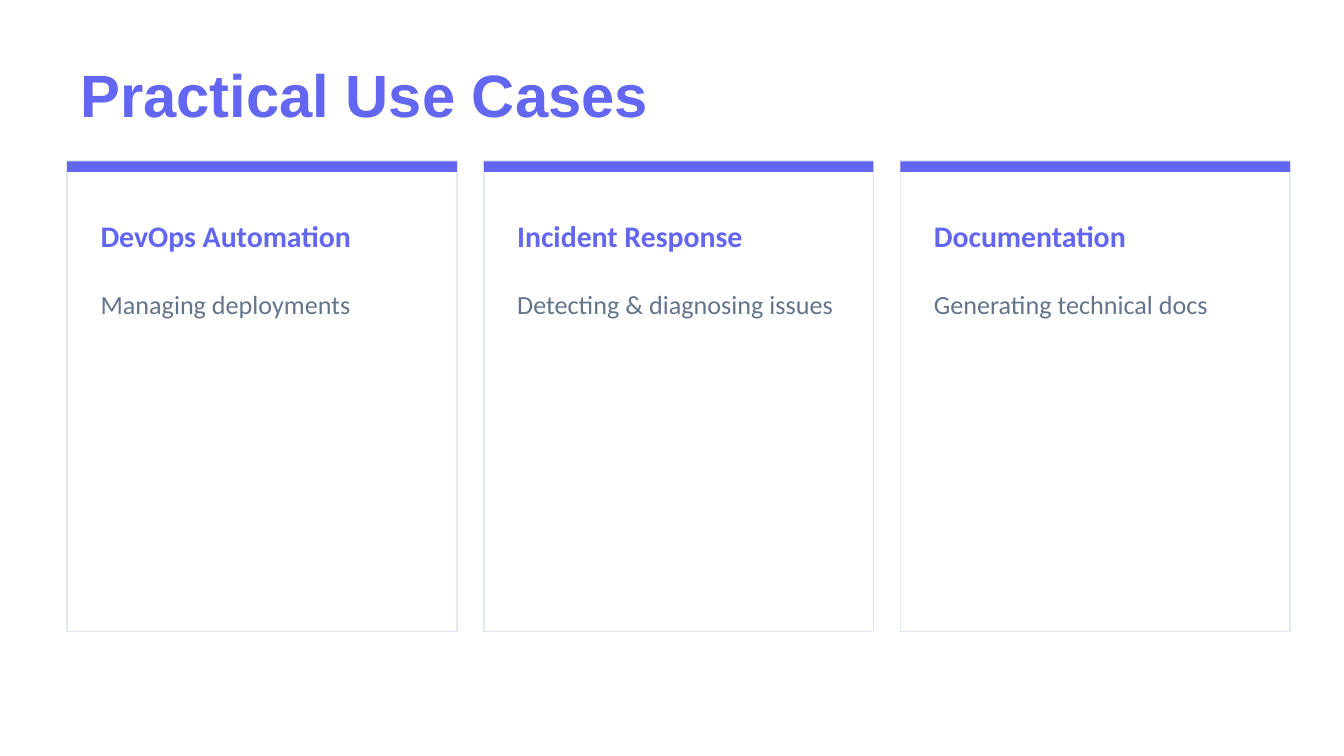
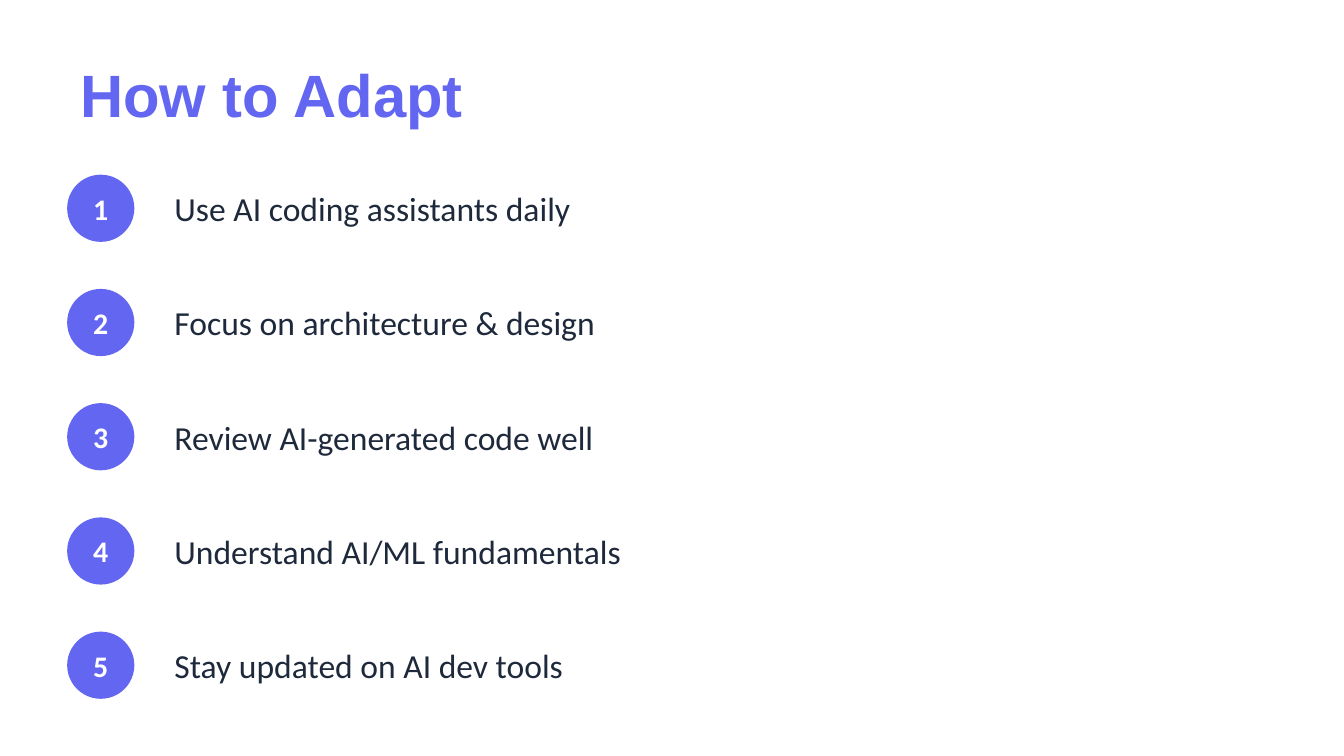
from pptx import Presentation
from pptx import util as u
from pptx.dml import color
from pptx.enum import shapes, text

BRAND, WHITE, EDGE, MUTED, INK = "6366F1", "FFFFFF", "E2E8F0", "64748B", "1E293B"
WIDTH, LEFT = 10, 0.5

CASES = [
    ("DevOps Automation", "Managing deployments"),
    ("Incident Response", "Detecting & diagnosing issues"),
    ("Documentation", "Generating technical docs"),
]
STEPS = [
    "Use AI coding assistants daily",
    "Focus on architecture & design",
    "Review AI-generated code well",
    "Understand AI/ML fundamentals",
    "Stay updated on AI dev tools",
]


def rgb(code):
    return color.RGBColor.from_string(code)


def write(frame, words, size=14, tint=INK, font="Calibri", bold=False,
          align=text.PP_ALIGN.LEFT, anchor=text.MSO_ANCHOR.MIDDLE):
    frame.word_wrap = True
    frame.vertical_anchor = anchor
    para = frame.paragraphs[0]
    para.alignment = align
    run = para.add_run()
    run.text = words
    run.font.name = font
    run.font.size = u.Pt(size)
    run.font.bold = bold
    run.font.color.rgb = rgb(tint)


class Deck:
    """Holds the shared style and the current slide."""

    def __init__(self):
        self.show = Presentation()
        self.show.slide_width = u.Inches(WIDTH)
        self.show.slide_height = u.Inches(WIDTH * 9 / 16)
        self.slide = None

    def page(self, title):
        self.slide = self.show.slides.add_slide(self.show.slide_layouts[6])
        fill = self.slide.background.fill
        fill.solid()
        fill.fore_color.rgb = rgb(WHITE)
        self.label(title, LEFT, 0.4, 9, 0.6, size=32, tint=BRAND, font="Arial", bold=True)

    def label(self, words, x, y, w, h, **style):
        box = self.slide.shapes.add_textbox(*map(u.Inches, (x, y, w, h)))
        write(box.text_frame, words, **style)

    def shape(self, kind, x, y, w, h, fill=BRAND, line=None):
        item = self.slide.shapes.add_shape(kind, *map(u.Inches, (x, y, w, h)))
        item.shadow.inherit = False
        item.fill.solid()
        item.fill.fore_color.rgb = rgb(fill)
        if line:
            item.line.color.rgb = rgb(line)
            item.line.width = u.Pt(1)
        else:
            item.line.fill.background()

    def card(self, x, head, body):
        y, wide, pad = 1.2, 2.9, 0.15
        rect = shapes.MSO_SHAPE.RECTANGLE
        self.shape(rect, x, y, wide, 3.5, fill=WHITE, line=EDGE)
        self.shape(rect, x, y, wide, 0.08)
        inner = wide - 2 * pad
        self.label(head, x + pad, y + 0.3, inner, 0.5, size=16, tint=BRAND, bold=True)
        self.label(body, x + pad, y + 0.9, inner, 2.4, tint=MUTED, anchor=text.MSO_ANCHOR.TOP)

    def step(self, y, number, words):
        side = 0.5
        spot = (LEFT, y, side, side)
        self.shape(shapes.MSO_SHAPE.OVAL, *spot)
        self.label(str(number), *spot, size=16, tint=WHITE, bold=True,
                   align=text.PP_ALIGN.CENTER)
        self.label(words, 1.2, y, 8.3, side, size=18)


def main():
    deck = Deck()

    deck.page("Practical Use Cases")
    for i, (head, body) in enumerate(CASES):
        deck.card(LEFT + 3.1 * i, head, body)

    deck.page("How to Adapt")
    for i, words in enumerate(STEPS):
        deck.step(1.3 + 0.85 * i, i + 1, words)

    deck.show.save("out.pptx")


if __name__ == "__main__":
    main()
